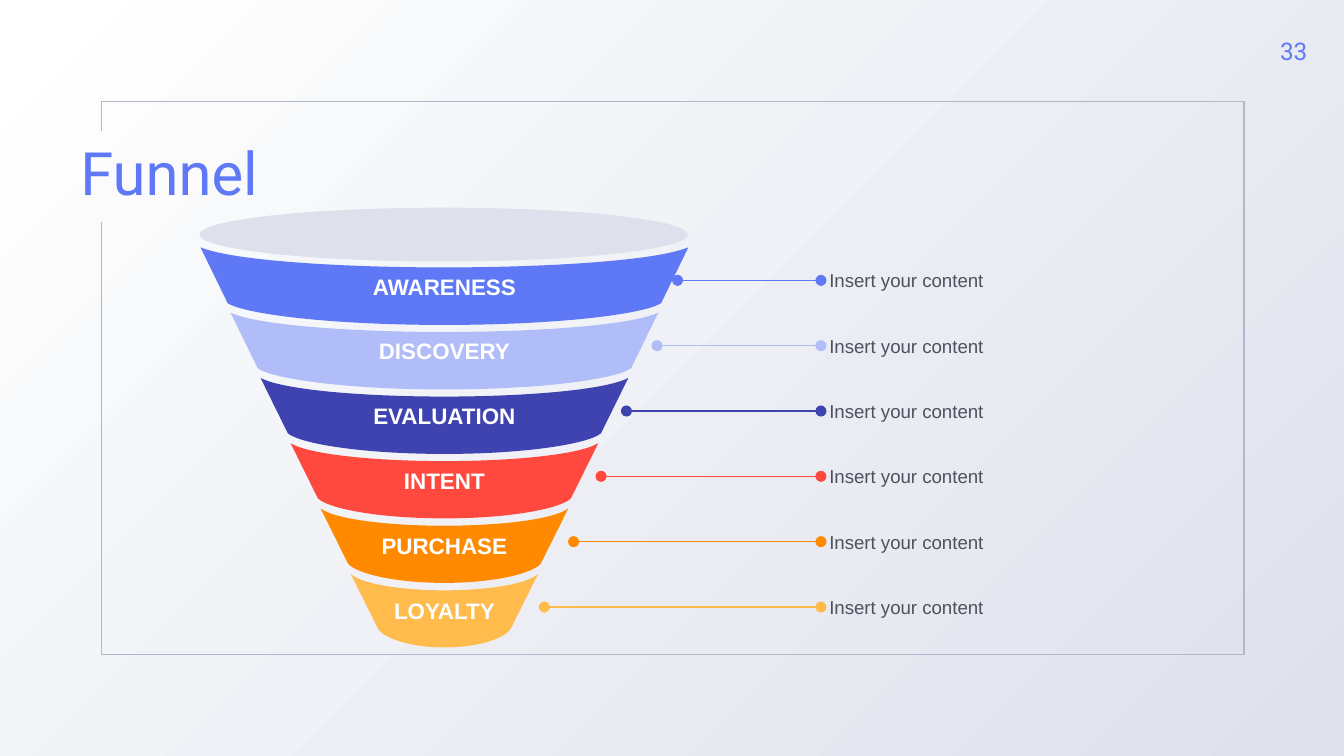
from dataclasses import dataclass

from lxml.etree import SubElement
from pptx import Presentation
from pptx.dml.color import RGBColor
from pptx.enum.shapes import MSO_CONNECTOR, MSO_SHAPE
from pptx.enum.text import MSO_ANCHOR, MSO_AUTO_SIZE, PP_ALIGN
from pptx.oxml.ns import qn
from pptx.shapes.autoshape import Shape
from pptx.shapes.shapetree import GroupShapes, SlideShapes
from pptx.slide import Slide
from pptx.text.text import TextFrame
from pptx.util import Pt

COLORS = {
    "white": "FFFFFF",
    "mist": "DEE0EB",
    "frame": "B3B7CC",
    "text": "4E515E",
    "blue": "5F79F6",
    "periwinkle": "B1BDF8",
    "indigo": "3F43AF",
    "red": "FF493F",
    "orange": "FF8A00",
    "amber": "FFBB4B",
}
CENTER_X = 238.1
STEP_Y = 35
STEP_HALF = 16.1

Point = tuple[float, float]


@dataclass
class Stage:
    name: str
    color: str
    line_x: float


STAGES = [
    Stage("AWARENESS", "blue", 363),
    Stage("DISCOVERY", "periwinkle", 352),
    Stage("EVALUATION", "indigo", 335.6),
    Stage("INTENT", "red", 322),
    Stage("PURCHASE", "orange", 307.3),
    Stage("LOYALTY", "amber", 291.6),
]


def rgb(name: str) -> RGBColor:
    return RGBColor.from_string(COLORS[name])


def write_text(tf: TextFrame, text: str, size: float, font: str, color: str,
               align: PP_ALIGN = PP_ALIGN.LEFT, bold: bool = False) -> None:
    tf.text = text
    tf.word_wrap = True
    tf.auto_size = MSO_AUTO_SIZE.NONE
    tf.vertical_anchor = MSO_ANCHOR.MIDDLE
    tf.margin_left = tf.margin_right = tf.margin_top = tf.margin_bottom = 0
    p = tf.paragraphs[0]
    p.alignment = align
    r = p.runs[0]
    r.font.size = Pt(size)
    r.font.name = font
    r.font.bold = bold
    r.font.color.rgb = rgb(color)


def arc(half: float, y: float, depth: float, outer: float, rise: float,
        inner: float) -> list[Point]:
    left = [(-half, y), (-half * outer, y + depth * rise), (-half * inner, y + depth)]
    right = [(-x, py) for x, py in reversed(left)]
    return [(CENTER_X + x, py) for x, py in left + [(0, y + depth)] + right]


def add_outline(shapes: SlideShapes | GroupShapes, points: list[Point],
                close: bool) -> Shape:
    emu = [(Pt(x), Pt(y)) for x, y in points]
    builder = shapes.build_freeform(*emu[0])
    builder.add_line_segments(emu[1:], close=close)
    sp = builder.convert_to_shape()
    sp.shadow.inherit = False
    return sp


def curve_segments(sp: Shape) -> None:
    lines = list(sp._element.iter(qn("a:lnTo")))
    for first, second, third in zip(lines[::3], lines[1::3], lines[2::3]):
        first.tag = qn("a:cubicBezTo")
        for extra in (second, third):
            first.append(extra[0])
            extra.getparent().remove(extra)


def add_band(shapes: GroupShapes, i: int, stage: Stage) -> None:
    top = 132.5 + STEP_Y * i
    half = 130.7 - STEP_HALF * i
    upper = arc(half, top, 10.8 - 0.4 * i, 0.87, 0.67, 0.42)
    lower = arc(half - 14.6, top + 30 - 0.15 * i, 11.6 - 0.3 * i, 0.92, 0.5, 0.53)[::-1]
    sp = add_outline(shapes, upper + lower[:1] * 3 + lower[1:] + upper[:1] * 3, True)
    curve_segments(sp)
    sp.fill.solid()
    sp.fill.fore_color.rgb = rgb(stage.color)
    sp.line.fill.background()
    write_text(sp.text_frame, stage.name, 12, "Arial", "white", PP_ALIGN.CENTER, True)


def add_callout(slide: Slide, i: int, stage: Stage) -> None:
    y = 150.2 + STEP_Y * i
    line = slide.shapes.add_connector(
        MSO_CONNECTOR.STRAIGHT, Pt(stage.line_x), Pt(y), Pt(439.8), Pt(y))
    line.line.color.rgb = rgb(stage.color)
    line.line.width = Pt(0.75)
    ln = line.line._get_or_add_ln()
    for end in ("a:headEnd", "a:tailEnd"):
        SubElement(ln, qn(end), type="oval")
    SubElement(line._element.spPr, qn("a:effectLst"))
    box = slide.shapes.add_textbox(Pt(444.3), Pt(y - 12.4), Pt(202), Pt(25))
    write_text(box.text_frame, "Insert your content", 10, "Arial", "text")


def add_background(slide: Slide) -> None:
    fill = slide.background.fill
    fill.gradient()
    fill.gradient_angle = 315
    for stop, name in zip(fill.gradient_stops, ("white", "mist")):
        stop.color.rgb = rgb(name)


def add_frame(slide: Slide) -> None:
    left, top, right, bottom = 54.3, 54.3, 666.5, 350.8
    sp = add_outline(slide.shapes, [(left, 70.2), (left, top), (right, top),
                                    (right, bottom), (left, bottom), (left, 119)], False)
    sp.fill.background()
    sp.line.color.rgb = rgb("frame")
    sp.line.width = Pt(0.75)


def add_title(slide: Slide) -> None:
    title = slide.shapes.title
    title.left, title.top, title.width, title.height = Pt(43), Pt(69.8), Pt(612), Pt(49.7)
    write_text(title.text_frame, "Funnel", 32, "Roboto", "blue")
    title.text_frame.paragraphs[0].line_spacing = 0.9


def add_funnel(slide: Slide) -> None:
    shapes = slide.shapes.add_group_shape().shapes
    for i, stage in enumerate(STAGES):
        add_band(shapes, i, stage)
    rim = shapes.add_shape(MSO_SHAPE.OVAL, Pt(106.9), Pt(111.3), Pt(261.5), Pt(28.8))
    rim.shadow.inherit = False
    rim.fill.solid()
    rim.fill.fore_color.rgb = rgb("mist")
    rim.line.fill.background()


def main() -> None:
    prs = Presentation()
    prs.slide_width, prs.slide_height = Pt(720), Pt(405)
    slide = prs.slides.add_slide(prs.slide_layouts[5])
    add_background(slide)
    add_frame(slide)
    add_title(slide)
    number = slide.shapes.add_textbox(Pt(666), Pt(0), Pt(54), Pt(54))
    write_text(number.text_frame, "33", 13, "Roboto", "blue", PP_ALIGN.CENTER)
    add_funnel(slide)
    for i, stage in enumerate(STAGES):
        add_callout(slide, i, stage)
    prs.save("out.pptx")


if __name__ == "__main__":
    main()
